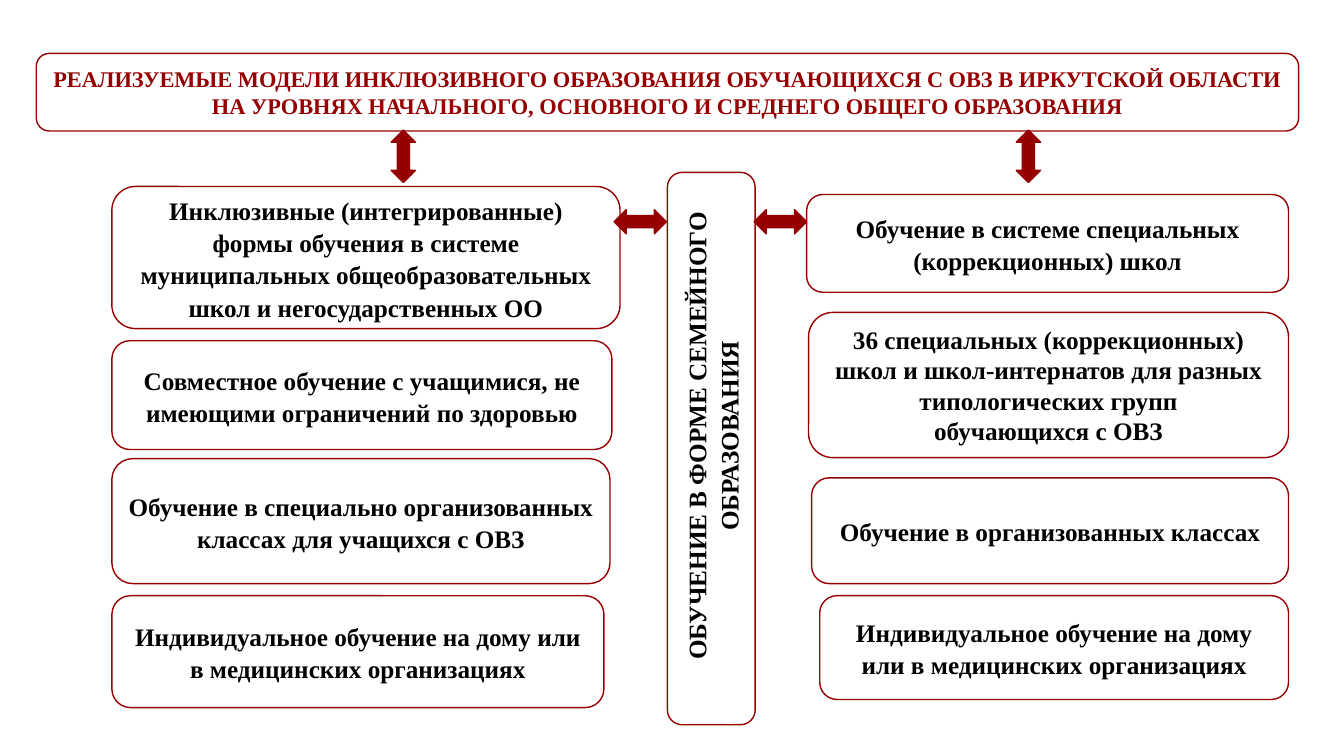
"""Build a slide on models of inclusive education."""
from dataclasses import dataclass

from pptx import Presentation
from pptx.dml.color import RGBColor as RGB
from pptx.enum.shapes import MSO_SHAPE as SHAPE
from pptx.enum.text import MSO_ANCHOR as ANCHOR, PP_ALIGN as ALIGN
from pptx.util import Inches, Pt


@dataclass(frozen=True)
class Theme:
    """Hold the colours, font and type sizes."""
    red: RGB = RGB(0x96, 0, 0)
    white: RGB = RGB(255, 255, 255)
    black: RGB = RGB(0, 0, 0)
    font: str = "Times New Roman"
    head: int = 16
    body: int = 18


THEME = Theme()
LEFT, RIGHT = 1.11, 12.78
FORMS = [
    (1.85, 5.04, 1.41, "Инклюзивные (интегрированные) формы обучения в системе "
     "муниципальных общеобразовательных школ и негосударственных ОО"),
    (3.38, 4.96, 1.08, "Совместное обучение с учащимися, не имеющими ограничений по здоровью"),
    (4.55, 4.94, 1.24, "Обучение в специально организованных классах для учащихся с ОВЗ"),
    (5.91, 4.88, 1.11, "Индивидуальное обучение на дому или в медицинских организациях"),
]
SCHOOLS = [
    (1.93, 4.78, 0.97, "Обучение в системе специальных (коррекционных) школ", 1.07),
    (3.1, 4.76, 1.44, "36 специальных (коррекционных) школ и школ-интернатов для разных "
     "типологических групп\nобучающихся с ОВЗ", 1.0),
    (4.74, 4.73, 1.05, "Обучение в организованных классах", 1.07),
    (5.91, 4.65, 1.03, "Индивидуальное обучение на дому или в медицинских организациях", 1.07),
]
ARROWS = [(6.09, 2.08, 0), (7.48, 2.08, 0), (3.74, 1.43, 90), (9.94, 1.43, 90)]


def add_form(slide, kind, area, fill):
    """Add a red-lined shape without a shadow."""
    form = slide.shapes.add_shape(kind, *map(Inches, area))
    form.shadow.inherit = False
    form.fill.solid()
    form.fill.fore_color.rgb = fill
    form.line.color.rgb = THEME.red
    form.line.width = Pt(1)
    return form


def add_box(slide, area, text, size=THEME.body, color=THEME.black, pitch=1.07):
    """Add a rounded box with centred bold text."""
    box = add_form(slide, SHAPE.FLOWCHART_ALTERNATE_PROCESS, area, THEME.white)
    frame = box.text_frame
    frame.word_wrap = True
    frame.vertical_anchor = ANCHOR.MIDDLE
    for i, line in enumerate(text.split("\n")):
        para = frame.add_paragraph() if i else frame.paragraphs[0]
        para.alignment = ALIGN.CENTER
        para.line_spacing = pitch
        run = para.add_run()
        run.text = line
        run.font.name = THEME.font
        run.font.size = Pt(size)
        run.font.bold = True
        run.font.color.rgb = color
    return box


def add_pillar(slide, area, text):
    """Add a box whose text reads upwards."""
    box = add_box(slide, area, text)
    box.element.txBody.bodyPr.set("vert", "vert270")
    para = box.text_frame.paragraphs[0]
    para._p.get_or_add_pPr().set("marL", str(Inches(0.25)))


def add_arrow(slide, left, top, turn):
    """Add a double arrow turned by the given angle."""
    arrow = add_form(slide, SHAPE.LEFT_RIGHT_ARROW, (left, top, 0.52, 0.24), THEME.red)
    arrow.rotation = turn


def main():
    """Build and save the slide."""
    deck = Presentation()
    deck.slide_width, deck.slide_height = Inches(13.33), Inches(7.5)
    slide = deck.slides.add_slide(deck.slide_layouts[6])
    add_box(slide, (0.36, 0.53, 12.52, 0.77),
            "РЕАЛИЗУЕМЫЕ МОДЕЛИ ИНКЛЮЗИВНОГО ОБРАЗОВАНИЯ ОБУЧАЮЩИХСЯ С ОВЗ В ИРКУТСКОЙ ОБЛАСТИ "
            "НА УРОВНЯХ НАЧАЛЬНОГО, ОСНОВНОГО И СРЕДНЕГО ОБЩЕГО ОБРАЗОВАНИЯ",
            THEME.head, THEME.red, 1.0)
    for top, width, height, text in FORMS:
        add_box(slide, (LEFT, top, width, height), text)
    for top, width, height, text, pitch in SCHOOLS:
        add_box(slide, (RIGHT - width, top, width, height), text, pitch=pitch)
    add_pillar(slide, (6.62, 1.71, 0.87, 5.48), "ОБУЧЕНИЕ В ФОРМЕ СЕМЕЙНОГО ОБРАЗОВАНИЯ")
    for spot in ARROWS:
        add_arrow(slide, *spot)
    deck.save("out.pptx")


if __name__ == "__main__":
    main()
